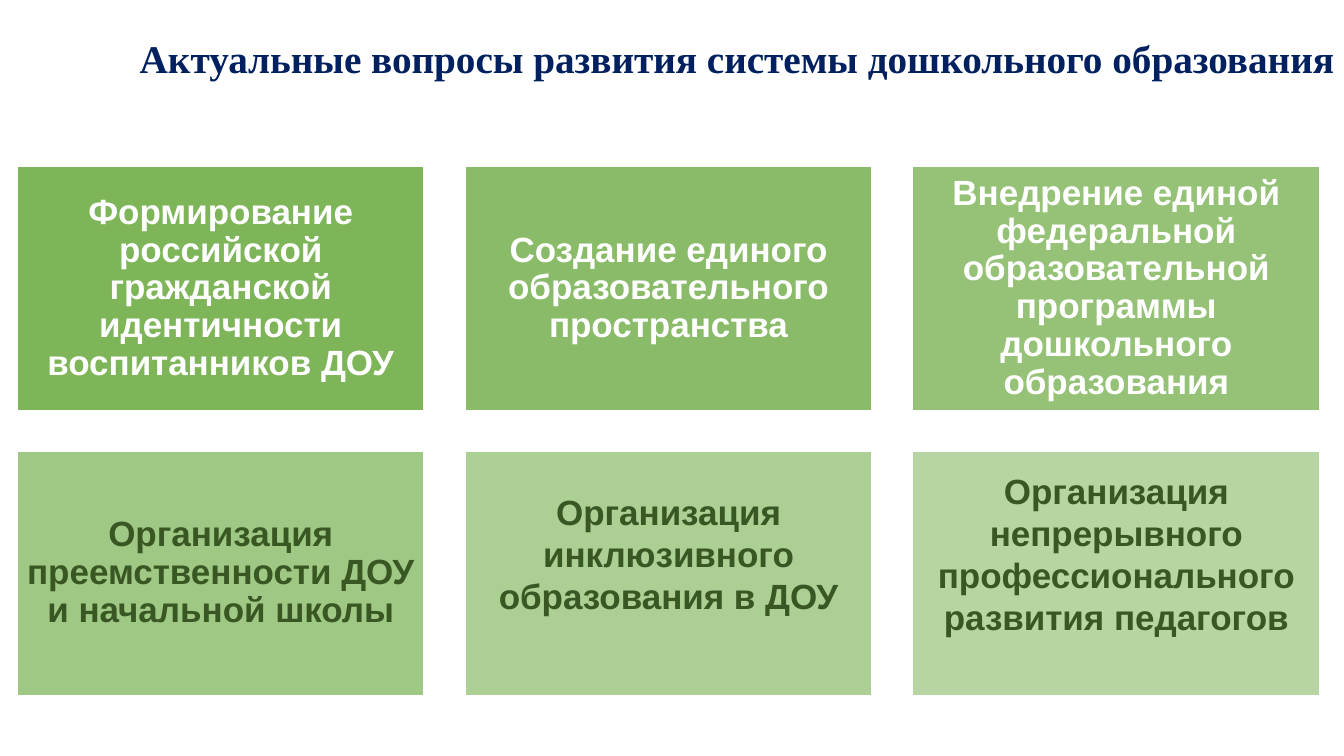
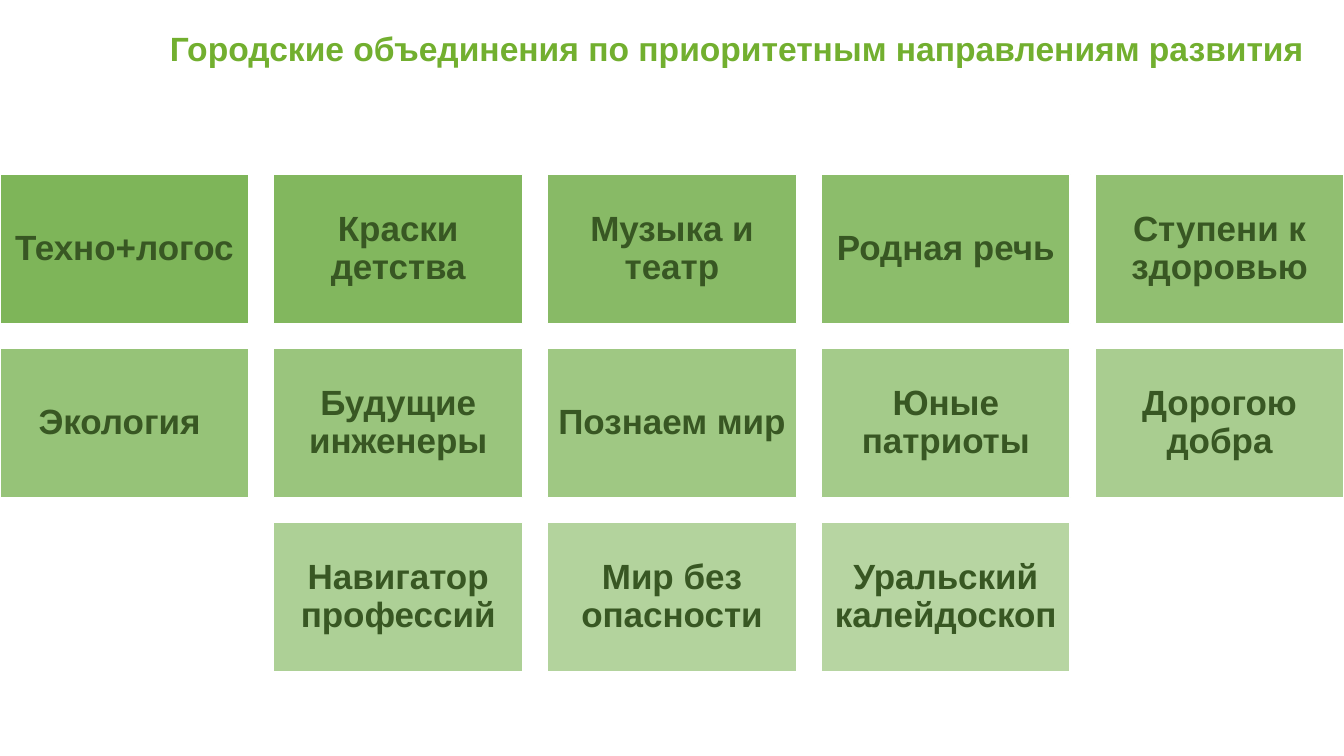
from lxml.etree import SubElement
from pptx import Presentation
from pptx.dml.color import RGBColor
from pptx.enum.shapes import MSO_SHAPE as Shape
from pptx.enum.text import MSO_ANCHOR as Anchor, PP_ALIGN as Align
from pptx.oxml.ns import qn
from pptx.util import Inches, Pt

WIDTH, HEIGHT = 13.33, 7.5
NAVY = RGBColor(0x00, 0x20, 0x60)
LIME = RGBColor(0x72, 0xAF, 0x2F)
GREEN = RGBColor(0x70, 0xAD, 0x47)
DARK_GREEN = RGBColor(0x38, 0x57, 0x23)
WHITE = RGBColor(0xFF, 0xFF, 0xFF)

CARD_SIZE = 25
CARD_RATIO = 0.6            # card height as a share of its width
GAP_RATIO = 0.1             # gap as a share of the card width
OPAQUE, FAINT = 90, 50      # opacity of the first and last card, percent
INSET = 0.1
RAISED_INSET = 0.5          # bottom inset that lifts the text of a card

SLIDES = [
    {
        "title": "Актуальные вопросы развития системы дошкольного образования",
        "title_box": (1.24, 0.21, 12.09, 0.79),
        "title_font": ("Times New Roman", 28, NAVY),
        "grid": (0.17, 1.65, 12.92),
        "columns": 3,
        "white_cards": 3,
        "raised_cards": 2,
        "cards": [
            "Формирование российской гражданской идентичности воспитанников ДОУ",
            "Создание единого образовательного пространства",
            "Внедрение единой федеральной образовательной программы дошкольного образования",
            "Организация преемственности ДОУ и начальной школы",
            "Организация инклюзивного образования в ДОУ",
            "Организация непрерывного профессионального развития педагогов",
        ],
    },
    {
        "title": "Городские объединения по приоритетным направлениям развития",
        "title_box": (1.42, 0.11, 11.61, 0.79),
        "title_font": ("Arial", 24, LIME),
        "grid": (0, 1.73, WIDTH),
        "columns": 5,
        "white_cards": 0,
        "raised_cards": 0,
        "cards": [
            "Техно+логос", "Краски детства", "Музыка и театр", "Родная речь",
            "Ступени к здоровью", "Экология ", "Будущие инженеры", "Познаем мир",
            "Юные патриоты", "Дорогою добра", "Навигатор профессий",
            "Мир без опасности", "Уральский калейдоскоп",
        ],
    },
]


def write(text_frame, text, align, spacing, name, size, color):
    text_frame.word_wrap = True
    text_frame.vertical_anchor = Anchor.MIDDLE
    paragraph = text_frame.paragraphs[0]
    paragraph.alignment = align
    paragraph.line_spacing = spacing
    run = paragraph.add_run()
    run.text = text
    run.font.name, run.font.size, run.font.bold = name, Pt(size), True
    run.font.color.rgb = color


def add_title(slide, text, box, font):
    title = slide.shapes.title
    title.left, title.top, title.width, title.height = map(Inches, box)
    write(title.text_frame, text, Align.RIGHT, 0.9, *font)


def add_card(slide, text, box, opacity, color, raised):
    card = slide.shapes.add_shape(Shape.RECTANGLE, *map(Inches, box))
    card.shadow.inherit = False
    card.fill.solid()
    card.fill.fore_color.rgb = GREEN
    fill_color = card.fill._xPr.find(qn("a:solidFill"))[0]
    SubElement(fill_color, qn("a:alpha"), val=str(round(opacity) * 1000))
    card.line.color.rgb = WHITE
    card.line.width = Pt(1)
    frame = card.text_frame
    frame.margin_left = frame.margin_right = frame.margin_top = Inches(INSET)
    frame.margin_bottom = Inches(RAISED_INSET if raised else INSET)
    write(frame, text, Align.CENTER, 1.0 if raised else 0.9, "Arial", CARD_SIZE, color)


def add_grid(slide, content):
    """Lay the cards out in rows, centring a short last row and fading evenly."""
    left, top, total = content["grid"]
    columns, cards = content["columns"], content["cards"]
    width = total / (columns + (columns - 1) * GAP_RATIO)
    height, gap = width * CARD_RATIO, width * GAP_RATIO
    last = len(cards) - 1
    for index, text in enumerate(cards):
        row, column = divmod(index, columns)
        in_row = min(columns, len(cards) - row * columns)
        x = left + (column + (columns - in_row) / 2) * (width + gap)
        y = top + row * (height + gap)
        opacity = OPAQUE + (FAINT - OPAQUE) * index / last
        color = WHITE if index < content["white_cards"] else DARK_GREEN
        raised = index >= len(cards) - content["raised_cards"]
        add_card(slide, text, (x, y, width, height), opacity, color, raised)


def main():
    presentation = Presentation()
    presentation.slide_width = Inches(WIDTH)
    presentation.slide_height = Inches(HEIGHT)
    for content in SLIDES:
        slide = presentation.slides.add_slide(presentation.slide_layouts[5])
        add_title(slide, content["title"], content["title_box"], content["title_font"])
        add_grid(slide, content)
    presentation.save("out.pptx")


if __name__ == "__main__":
    main()
